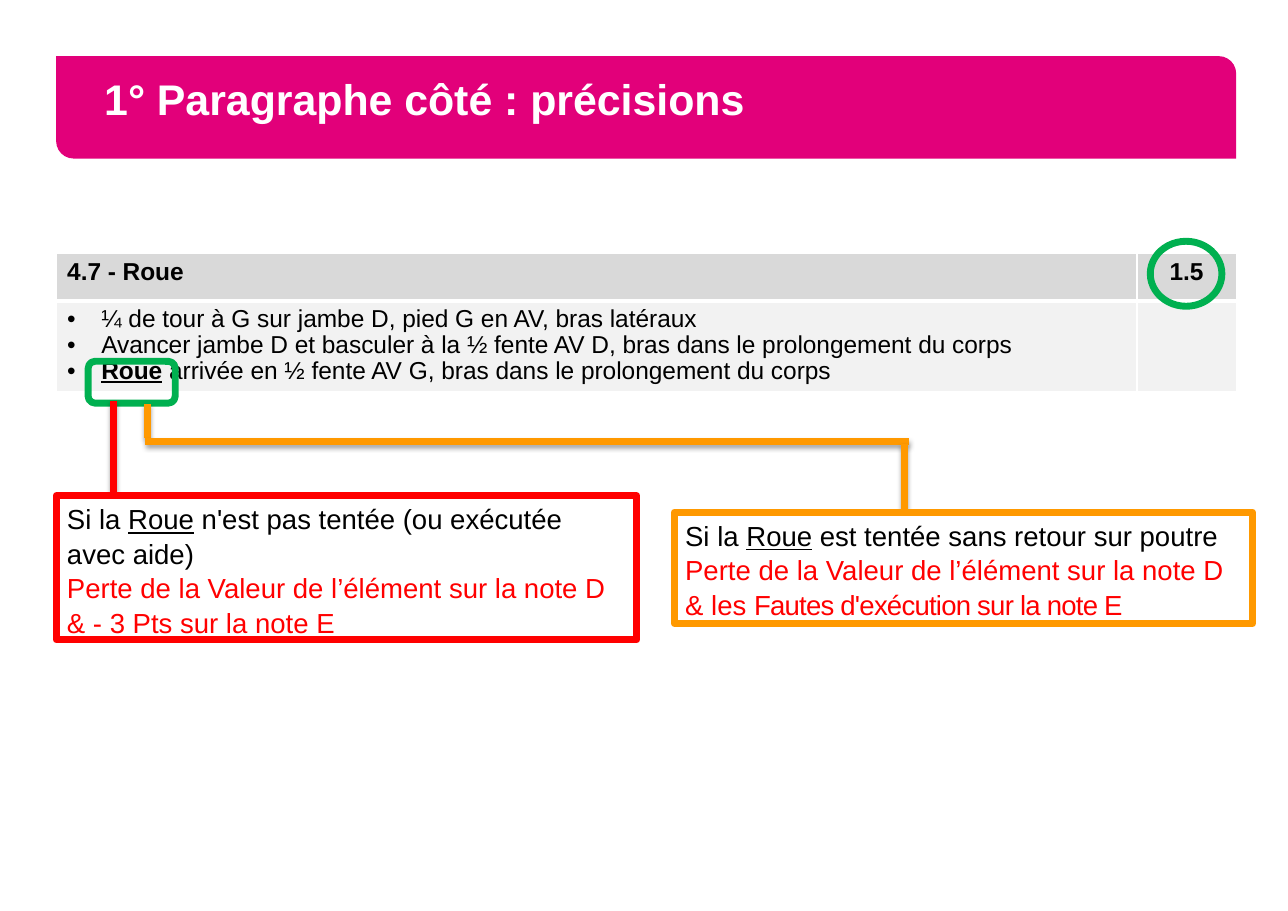
from lxml import etree
from pptx import Presentation
from pptx.dml.color import RGBColor
from pptx.enum.shapes import MSO_CONNECTOR, MSO_SHAPE
from pptx.enum.text import MSO_ANCHOR, PP_ALIGN
from pptx.oxml.ns import qn
from pptx.util import Emu, Pt

PX = 9144  # 100 px to the inch
FONT = "Arial"
LINE = 4.5
COLORS = {
    "pink": "E2007A", "white": "FFFFFF", "black": "000000",
    "grey": "D9D9D9", "light": "F2F2F2",
    "red": "FF0000", "orange": "FF9900", "green": "00B050",
}
RECT, OVAL = MSO_SHAPE.RECTANGLE, MSO_SHAPE.OVAL
ROUND, BANNER = MSO_SHAPE.ROUNDED_RECTANGLE, MSO_SHAPE.ROUND_2_DIAG_RECTANGLE
STRAIGHT = MSO_CONNECTOR.STRAIGHT
LEFT, CENTER = PP_ALIGN.LEFT, PP_ALIGN.CENTER
TOP, MIDDLE = MSO_ANCHOR.TOP, MSO_ANCHOR.MIDDLE


def px(*lengths):
    return [Emu(n * PX) for n in lengths]


def rgb(name):
    return RGBColor.from_string(COLORS[name])


def add(parent, tag, **attrs):
    return etree.SubElement(parent, qn(tag), {k: str(v) for k, v in attrs.items()})


class Slide:
    def __init__(self, prs):
        self.s = prs.slides.add_slide(prs.slide_layouts[6])

    def shape(self, kind, box, fill=None, line=None):
        sp = self.s.shapes.add_shape(kind, *px(*box))
        sp.shadow.inherit = False
        if fill:
            sp.fill.solid()
            sp.fill.fore_color.rgb = rgb(fill)
        else:
            sp.fill.background()
        if line:
            sp.line.color.rgb = rgb(line)
            sp.line.width = Pt(LINE)
        else:
            sp.line.fill.background()
        return sp

    def text(self, tf, paragraphs, size, align=LEFT, spacing=None, bullet=False):
        """Each paragraph is a list of (text, colour, style) runs; style holds b, u or spc."""
        for i, runs in enumerate(paragraphs):
            p = tf.paragraphs[0] if i == 0 else tf.add_paragraph()
            p.alignment = align
            if spacing:
                p.line_spacing = spacing
            if bullet:
                pPr = p._p.get_or_add_pPr()
                pPr.set("marL", str(31 * PX))
                pPr.set("indent", str(-31 * PX))
                add(pPr, "a:buFont", typeface=FONT)
                add(pPr, "a:buChar", char="•")
            for words, color, style in runs:
                r = p.add_run()
                r.text = words
                r.font.name, r.font.size = FONT, Pt(size)
                r.font.color.rgb = rgb(color)
                r.font.bold = style.get("b", False)
                r.font.underline = style.get("u", False)
                if "spc" in style:
                    r._r.get_or_add_rPr().set("spc", str(style["spc"]))

    def note(self, box, line, paragraphs):
        tf = self.shape(RECT, box, "white", line).text_frame
        tf.word_wrap = True
        tf.vertical_anchor = TOP
        self.text(tf, paragraphs, 18, spacing=1.04)

    def connector(self, x1, y1, x2, y2, color):
        c = self.s.shapes.add_connector(STRAIGHT, *px(x1, y1, x2, y2))
        c.line.color.rgb = rgb(color)
        c.line.width = Pt(LINE)
        effects = add(c._element.spPr, "a:effectLst")
        shadow = add(effects, "a:outerShdw", blurRad=Pt(3.1), dist=Pt(1.7),
                     dir=5400000, rotWithShape=0)
        black = add(shadow, "a:srgbClr", val=COLORS["black"])
        add(black, "a:alpha", val=37000)

    def table(self, box, widths, heights):
        t = self.s.shapes.add_table(len(heights), len(widths), *px(*box)).table
        t.first_row = t.horz_banding = False
        for col, width in zip(t.columns, px(*widths)):
            col.width = width
        for row, height in zip(t.rows, px(*heights)):
            row.height = height
        return t

    def cell(self, cell, fill, top=1, bottom=1):
        tcPr = cell._tc.get_or_add_tcPr()
        for side, width in (("L", 1), ("R", 1), ("T", top), ("B", bottom)):
            ln = add(tcPr, "a:ln" + side, w=Pt(width))
            add(add(ln, "a:solidFill"), "a:srgbClr", val=COLORS["white"])
        cell.fill.solid()
        cell.fill.fore_color.rgb = rgb(fill)


def main():
    prs = Presentation()
    prs.slide_width, prs.slide_height = px(1169, 827)
    slide = Slide(prs)
    bold, under = {"b": True}, {"u": True}

    # Title banner
    banner = slide.shape(BANNER, (51, 51, 1071, 93), "pink")
    banner.adjustments[0], banner.adjustments[1] = 0, 0.17
    tf = banner.text_frame
    tf.word_wrap = True
    tf.vertical_anchor = MIDDLE
    tf.margin_left, tf.margin_right = px(39, 39)
    slide.text(tf, [[("1° Paragraphe côté : précisions", "white", bold)]], 28,
               spacing=Pt(22))

    # Element table
    t = slide.table((51, 230, 1071, 126), (981, 90), (43, 83))
    for col in range(2):
        slide.cell(t.cell(0, col), "grey", bottom=3)
        slide.cell(t.cell(1, col), "light", top=3)
    slide.text(t.cell(0, 0).text_frame, [[("4.7 - Roue", "black", bold)]], 16)
    slide.text(t.cell(0, 1).text_frame, [[("1.5", "black", bold)]], 16, CENTER)
    steps = [
        [("¼ de tour à G sur jambe D, pied G en AV, bras latéraux", "black", {})],
        [("Avancer jambe D et basculer à la ½ fente AV D, "
          "bras dans le prolongement du corps", "black", {})],
        [("Roue", "black", {"b": True, "u": True}),
         (" arrivée en ½ fente AV G, bras dans le prolongement du corps", "black", {})],
    ]
    slide.text(t.cell(1, 0).text_frame, steps, 16, spacing=0.96, bullet=True)

    # Case not attempted
    slide.shape(ROUND, (80, 328, 79, 38), line="green")
    slide.connector(103, 364, 103, 450, "red")
    slide.note((51, 450, 527, 131), "red", [
        [("Si la ", "black", {}), ("Roue", "black", under),
         (" n'est pas tentée (ou exécutée avec aide)", "black", {})],
        [("Perte de la Valeur de l’élément sur la note D & - 3 Pts sur la note E",
          "red", {})],
    ])

    # Value marker
    slide.shape(OVAL, (1044, 219, 65, 59), line="green")

    # Case attempted without return to the beam
    for ends in ((134, 367, 134, 398), (132, 401, 825, 401), (821, 403, 821, 463)):
        slide.connector(*ends, "orange")
    slide.note((612, 465, 525, 101), "orange", [
        [("Si la ", "black", {}), ("Roue", "black", under),
         (" est tentée sans retour sur poutre", "black", {})],
        [("Perte de la Valeur de l’élément sur la note D", "red", {})],
        [("& les ", "red", {}),
         ("Fautes d'exécution sur la note E", "red", {"spc": -50})],
    ])

    prs.save("out.pptx")


if __name__ == "__main__":
    main()
